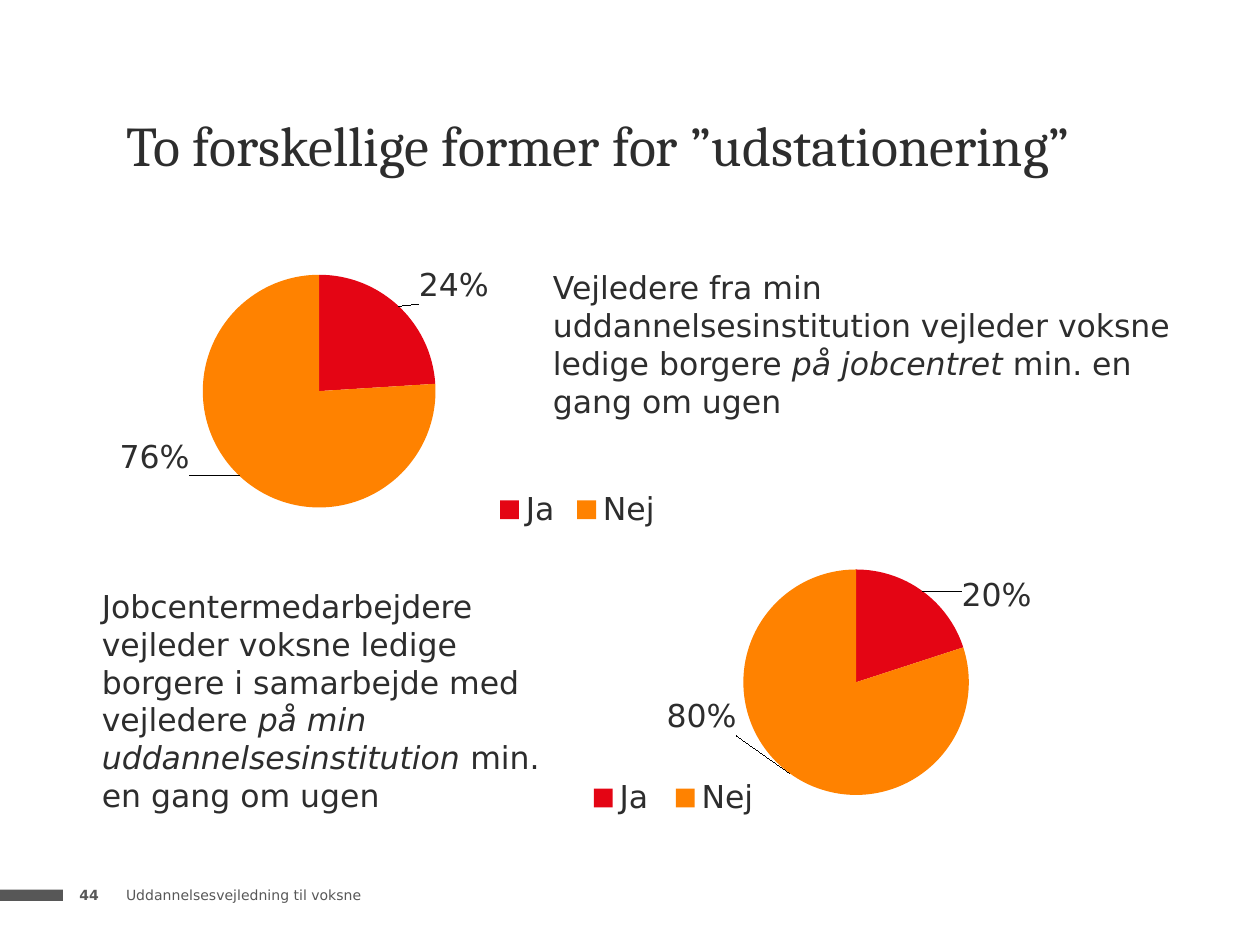
import pptx
import pptx.chart.data
import pptx.dml.color
import pptx.enum.chart
import pptx.enum.shapes
import pptx.enum.text
import pptx.oxml
import pptx.oxml.ns
import pptx.util
from dataclasses import dataclass

Inches = pptx.util.Inches
Anchor = pptx.enum.text.MSO_ANCHOR


@dataclass(frozen=True)
class Theme:
    ink: str = "2D2D2D"
    grey: str = "575757"
    yes: str = "E40514"
    no: str = "FF8200"
    heading: str = "Cambria"
    body: str = "DejaVu Sans"
    title_size: int = 32
    body_size: int = 18
    footer_size: int = 8


THEME = Theme()


def rgb(value):
    return pptx.dml.color.RGBColor.from_string(value)


def style_font(font, name, size, color):
    font.name = name
    font.size = pptx.util.Pt(size)
    font.color.rgb = rgb(color)


def add_text(page, text, at, *, font=THEME.body, size=THEME.body_size,
             color=THEME.ink, bold=False, anchor=Anchor.TOP, inset=True, wrap=True):
    """Place one paragraph; parts between asterisks are italic."""
    box = page.shapes.add_textbox(*map(Inches, at))
    frame = box.text_frame
    frame.word_wrap = wrap
    frame.vertical_anchor = anchor
    if not inset:
        frame.margin_left = frame.margin_right = 0
        frame.margin_top = frame.margin_bottom = 0
    para = frame.paragraphs[0]
    for index, part in enumerate(text.split("*")):
        span = para.add_run()
        span.text = part
        style_font(span.font, font, size, color)
        span.font.bold = bold
        span.font.italic = index % 2 == 1
    return box


def manual_layout(**values):
    """Make a chart layout element; its values are fractions of the chart."""
    items = "".join(f'<c:{key} val="{value}"/>' for key, value in values.items())
    return pptx.oxml.parse_xml(
        f'<c:layout {pptx.oxml.ns.nsdecls("c")}>'
        f"<c:manualLayout>{items}</c:manualLayout></c:layout>")


def area_layout(area, at, **extra):
    """Turn an area in slide inches into a layout within the chart frame."""
    left, top, width, height = at
    x, y, w, h = area
    return manual_layout(**extra, xMode="edge", yMode="edge",
                         x=round((x - left) / width, 3), y=round((y - top) / height, 3),
                         w=round(w / width, 3), h=round(h / height, 3))


def add_pie(page, values, at, *, pie, legend, label_shifts):
    data = pptx.chart.data.CategoryChartData(number_format="0%")
    data.categories = ["Ja", "Nej"]
    data.add_series("Series 1", values)
    chart = page.shapes.add_chart(
        pptx.enum.chart.XL_CHART_TYPE.PIE, *map(Inches, at), data).chart
    chart.has_title = False
    style_font(chart.font, THEME.body, THEME.body_size, THEME.ink)

    # Plot area and legend
    plot_area = chart.plots[0]._element.getparent()
    for old in plot_area.findall(pptx.oxml.ns.qn("c:layout")):
        plot_area.remove(old)
    plot_area.insert(0, area_layout(pie, at, layoutTarget="inner"))
    chart.has_legend = True
    chart.legend.position = pptx.enum.chart.XL_LEGEND_POSITION.RIGHT
    chart.legend.include_in_layout = False
    position = chart.legend._element.find(pptx.oxml.ns.qn("c:legendPos"))
    position.addnext(area_layout(legend, at))

    # Slices and their labels
    series = chart.plots[0].series[0]
    labels = series.data_labels
    labels.show_value = True
    labels.number_format = "0%"
    labels.number_format_is_linked = False
    style_font(labels.font, THEME.body, THEME.body_size, THEME.ink)
    for index, (color, (x, y)) in enumerate(zip((THEME.yes, THEME.no), label_shifts)):
        point = series.points[index]
        point.format.fill.solid()
        point.format.fill.fore_color.rgb = rgb(color)
        point.format.line.fill.background()
        point.data_label.position = pptx.enum.chart.XL_LABEL_POSITION.OUTSIDE_END
        label = labels._element.findall(pptx.oxml.ns.qn("c:dLbl"))[index]
        label.find(pptx.oxml.ns.qn("c:idx")).addnext(manual_layout(x=x, y=y))


def add_footer(page):
    bar = page.shapes.add_shape(pptx.enum.shapes.MSO_SHAPE.RECTANGLE,
                                *map(Inches, (0, 7.06, 0.5, 0.09)))
    bar.shadow.inherit = False
    bar.fill.solid()
    bar.fill.fore_color.rgb = rgb(THEME.grey)
    bar.line.fill.background()
    style = dict(size=THEME.footer_size, color=THEME.grey, anchor=Anchor.MIDDLE,
                 inset=False, wrap=False)
    add_text(page, "Uddannelsesvejledning til voksne", (1, 7.02, 5.91, 0.16), **style)
    add_text(page, "44", (0.63, 7.02, 0.37, 0.16), bold=True, **style)


def main():
    deck = pptx.Presentation()
    deck.slide_width, deck.slide_height = Inches(10), Inches(7.5)
    page = deck.slides.add_slide(deck.slide_layouts[6])

    add_footer(page)
    add_text(page, "To forskellige former for ”udstationering”", (1, 0.42, 8.75, 0.99),
             font=THEME.heading, size=THEME.title_size, anchor=Anchor.BOTTOM, inset=False)

    # Guidance at the job centre
    add_pie(page, (0.24, 0.76), (0, 1.84, 5.94, 2.52),
            pie=(1.61, 2.18, 1.85, 1.85), legend=(3.87, 3.88, 1.42, 0.33),
            label_shifts=((0.02, 0.01), (-0.06, -0.13)))
    add_text(page, "Vejledere fra min uddannelsesinstitution vejleder voksne ledige "
             "borgere *på jobcentret *min. en gang om ugen", (4.29, 2.08, 5.17, 1.31))

    # Guidance at the educational institution
    add_pie(page, (0.2, 0.8), (4.45, 4.14, 5.55, 2.55),
            pie=(5.9, 4.52, 1.79, 1.79), legend=(4.58, 6.17, 1.54, 0.33),
            label_shifts=((0.05, 0.09), (-0.07, -0.25)))
    add_text(page, "Jobcentermedarbejdere vejleder voksne ledige borgere i samarbejde med "
             "vejledere *på min uddannelsesinstitution *min. en gang om ugen",
             (0.71, 4.61, 3.92, 1.92))

    deck.save("out.pptx")


if __name__ == "__main__":
    main()
